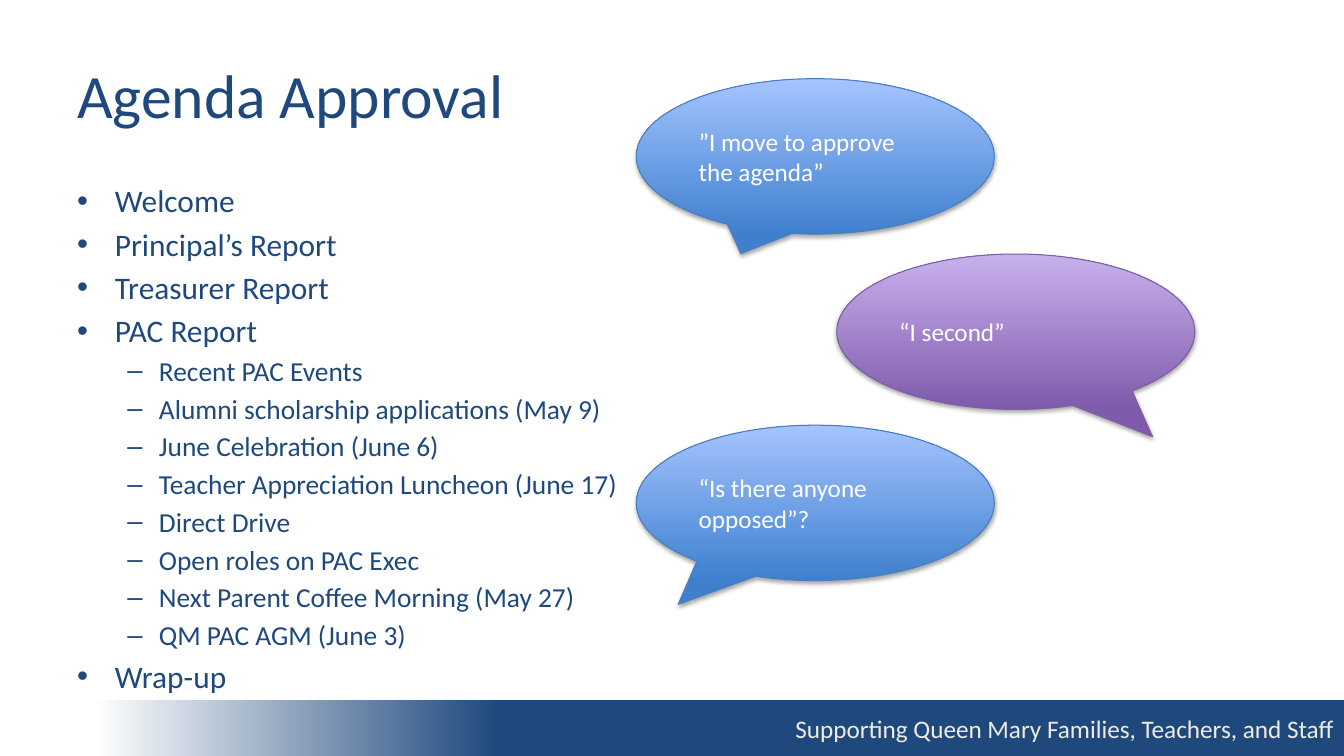
import pptx
import pptx.dml.color
import pptx.enum.shapes
import pptx.enum.text
import pptx.oxml
import pptx.oxml.ns
import pptx.util

PX = 9525
COLORS = {
    "navy": "1F497D", "white": "FFFFFF", "cream": "EEECE1",
    "blue_dark": "3F80CE", "blue_light": "A4C4FF", "blue_line": "4B7EBC",
    "purple_dark": "7F5BAB", "purple_light": "C8B0ED", "purple_line": "7D60A0",
}
LEVELS = [
    {"indent": 36, "hang": 36, "bullet": "•", "size": 22.4, "before": 4.1},
    {"indent": 78, "hang": 30, "bullet": "–", "size": 19.6, "before": 3.5},
]
AGENDA = [
    (0, "Welcome"),
    (0, "Principal’s Report"),
    (0, "Treasurer Report"),
    (0, "PAC Report"),
    (1, "Recent PAC Events"),
    (1, "Alumni scholarship applications (May 9)"),
    (1, "June Celebration (June 6)"),
    (1, "Teacher Appreciation Luncheon (June 17)"),
    (1, "Direct Drive"),
    (1, "Open roles on PAC Exec"),
    (1, "Next Parent Coffee Morning (May 27)"),
    (1, "QM PAC AGM (June 3)"),
    (0, "Wrap-up"),
]
CALLOUTS = [
    (606, 75, "blue", (-0.208, 0.625), "”I move to approve the agenda”"),
    (797, 242, "purple", (0.382, 0.675), "“I second”"),
    (606, 405, "blue", (-0.383, 0.653), "“Is there anyone opposed”?"),
]
SHADOW = (
    '<a:outerShdw %s blurRad="39370" dist="22860" dir="5400000" rotWithShape="0">'
    '<a:srgbClr val="000000"><a:alpha val="35000"/></a:srgbClr></a:outerShdw>'
    % pptx.oxml.ns.nsdecls("a")
)


def px(*lengths):
    return [pptx.util.Emu(n * PX) for n in lengths]


def rgb(name):
    return pptx.dml.color.RGBColor.from_string(COLORS[name])


def apply(target, values):
    for name, value in values.items():
        setattr(target, name, value)


def set_frame(s, anchor):
    apply(s.text_frame, {
        "word_wrap": True,
        "auto_size": pptx.enum.text.MSO_AUTO_SIZE.NONE,
        "vertical_anchor": anchor,
    })
    return s.text_frame


def write(p, text, size, color, align=pptx.enum.text.PP_ALIGN.LEFT):
    p.alignment = align
    r = p.add_run()
    r.text = text
    apply(r.font, {"name": "Calibri", "size": pptx.util.Pt(size)})
    r.font.color.rgb = rgb(color)


def fill_gradient(s, stops, angle):
    s.fill.gradient()
    s.fill.gradient_angle = angle
    for stop, (position, color) in zip(s.fill.gradient_stops, stops):
        stop.position = position
        stop.color.rgb = rgb(color)


def add_title(sp, text):
    s = sp.add_textbox(*px(64, 29, 1152, 120))
    tf = set_frame(s, pptx.enum.text.MSO_ANCHOR.MIDDLE)
    write(tf.paragraphs[0], text, 44, "navy")


def add_agenda(sp, items):
    s = sp.add_textbox(*px(64, 168, 1152, 475))
    tf = set_frame(s, pptx.enum.text.MSO_ANCHOR.TOP)
    for i, (depth, text) in enumerate(items):
        level = LEVELS[depth]
        p = tf.add_paragraph() if i else tf.paragraphs[0]
        p.level = depth
        if i:
            p.space_before = pptx.util.Pt(level["before"])
        pPr = p._p.get_or_add_pPr()
        pPr.set("marL", str(level["indent"] * PX))
        pPr.set("indent", str(-level["hang"] * PX))
        pPr.append(pptx.oxml.parse_xml(
            '<a:buFont %s typeface="Arial"/>' % pptx.oxml.ns.nsdecls("a")))
        pPr.append(pptx.oxml.parse_xml(
            '<a:buChar %s char="%s"/>' % (pptx.oxml.ns.nsdecls("a"), level["bullet"])))
        write(p, text, level["size"], "navy")


def add_callout(sp, left, top, hue, tail, text):
    s = sp.add_shape(pptx.enum.shapes.MSO_SHAPE.OVAL_CALLOUT, *px(left, top, 341, 148))
    for i, value in enumerate(tail):
        s.adjustments[i] = value
    fill_gradient(s, [(0, hue + "_dark"), (1, hue + "_light")], 90)
    s.line.color.rgb = rgb(hue + "_line")
    s.line.width = pptx.util.Pt(0.75)
    s.shadow.inherit = False
    s._element.spPr.find(pptx.oxml.ns.qn("a:effectLst")).append(pptx.oxml.parse_xml(SHADOW))
    tf = set_frame(s, pptx.enum.text.MSO_ANCHOR.MIDDLE)
    write(tf.paragraphs[0], text, 18, "white")


def add_footer(sp, text):
    s = sp.add_shape(pptx.enum.shapes.MSO_SHAPE.RECTANGLE, *px(0, 667, 1280, 53))
    fill_gradient(s, [(0.07, "white"), (0.37, "navy")], 0)
    s.line.fill.background()
    s.shadow.inherit = False
    tf = set_frame(s, pptx.enum.text.MSO_ANCHOR.MIDDLE)
    write(tf.paragraphs[0], text, 18, "cream", pptx.enum.text.PP_ALIGN.RIGHT)


def main():
    prs = pptx.Presentation()
    prs.slide_width, prs.slide_height = px(1280, 720)
    sp = prs.slides.add_slide(prs.slide_layouts[6]).shapes
    add_footer(sp, "Supporting Queen Mary Families, Teachers, and Staff")
    add_title(sp, "Agenda Approval")
    add_agenda(sp, AGENDA)
    for callout in CALLOUTS:
        add_callout(sp, *callout)
    prs.save("out.pptx")


if __name__ == "__main__":
    main()
